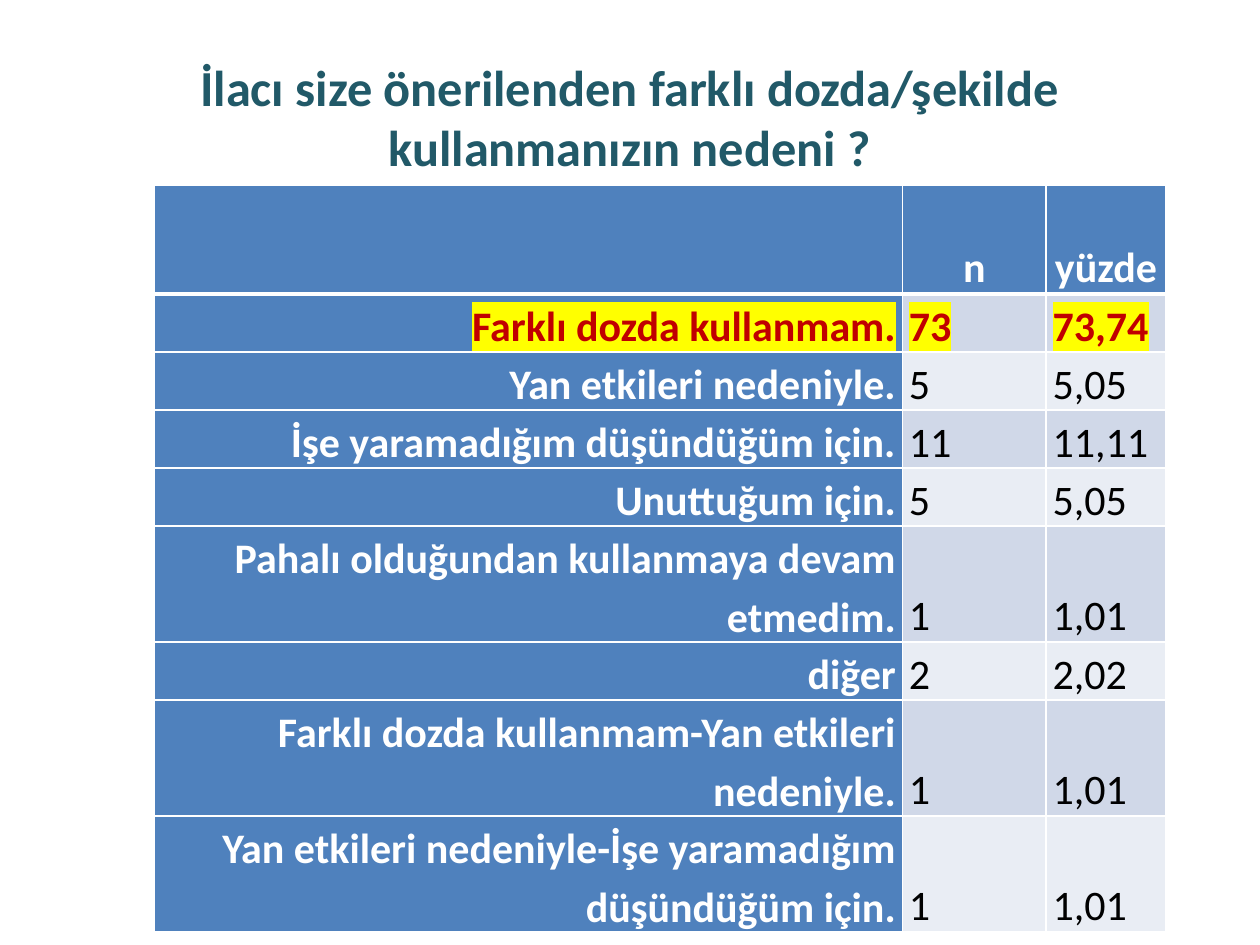
from lxml import etree
from pptx import Presentation
from pptx import util as u
from pptx.dml.color import RGBColor
from pptx.enum import text
from pptx.oxml import ns

TEAL = RGBColor(0x21, 0x59, 0x68)
BLUE = RGBColor(0x4F, 0x81, 0xBD)
BANDS = RGBColor(0xD0, 0xD8, 0xE8), RGBColor(0xE9, 0xED, 0xF4)
WHITE = RGBColor(0xFF, 0xFF, 0xFF)
BLACK = RGBColor(0, 0, 0)
RED = RGBColor(0xC0, 0, 0)
YELLOW = RGBColor(0xFF, 0xFF, 0)

TITLE = "İlacı size önerilenden farklı dozda/şekilde kullanmanızın nedeni ?"
ROWS = [
    ("", "n", "yüzde"),
    ("Farklı dozda kullanmam.", "73", "73,74"),
    ("Yan etkileri nedeniyle.", "5", "5,05"),
    ("İşe yaramadığım düşündüğüm için.", "11", "11,11"),
    ("Unuttuğum için.", "5", "5,05"),
    ("Pahalı olduğundan kullanmaya devam etmedim.", "1", "1,01"),
    ("diğer", "2", "2,02"),
    ("Farklı dozda kullanmam-Yan etkileri nedeniyle.", "1", "1,01"),
    ("Yan etkileri nedeniyle-İşe yaramadığım düşündüğüm için.", "1", "1,01"),
]
COLUMN_WIDTHS = 15.09, 2.9, 2.41
HEADER_HEIGHT, ROW_HEIGHT = 2.2, 1.09
HIGHLIGHTED_ROW = 1


class SurveySlide:
    """Draws a survey question and its answer table on one slide."""

    def __init__(self, presentation, font="Calibri"):
        self.font = font
        self.slide = presentation.slides.add_slide(presentation.slide_layouts[6])

    def format_text(self, paragraph, size, color, bold, align, highlight=None):
        paragraph.alignment = align
        for run in paragraph.runs:
            run.font.size = u.Pt(size)
            run.font.bold = bold
            run.font.color.rgb = color
            if highlight is not None:
                mark = etree.SubElement(run.font.fill._xPr, ns.qn("a:highlight"))
                etree.SubElement(mark, ns.qn("a:srgbClr"), val=str(highlight))
            run.font.name = self.font

    def title(self, left, top, width, height, words):
        shape = self.slide.shapes.add_textbox(u.Cm(left), u.Cm(top), u.Cm(width), u.Cm(height))
        frame = shape.text_frame
        frame.word_wrap = True
        frame.vertical_anchor = text.MSO_ANCHOR.MIDDLE
        frame.text = words
        self.format_text(frame.paragraphs[0], 28.8, TEAL, True, text.PP_ALIGN.CENTER)

    def borders(self, cell, top, bottom):
        properties = cell._tc.get_or_add_tcPr()
        for index, (side, width) in enumerate(zip("LRTB", (1, 1, top, bottom))):
            line = etree.Element(ns.qn(f"a:ln{side}"), w=str(u.Pt(width)))
            fill = etree.SubElement(line, ns.qn("a:solidFill"))
            etree.SubElement(fill, ns.qn("a:srgbClr"), val=str(WHITE))
            properties.insert(index, line)

    def cell(self, cell, words, row, column):
        header, label = row == 0, column == 0
        marked = row == HIGHLIGHTED_ROW
        cell.fill.solid()
        cell.fill.fore_color.rgb = BLUE if header or label else BANDS[(row - 1) % 2]
        cell.margin_left = cell.margin_right = u.Cm(0.13)
        cell.margin_top = cell.margin_bottom = 0
        cell.vertical_anchor = text.MSO_ANCHOR.BOTTOM
        cell.text_frame.text = words
        paragraph = cell.text_frame.paragraphs[0]
        paragraph.line_spacing = 1.15
        color = RED if marked else WHITE if header or label else BLACK
        align = (text.PP_ALIGN.CENTER if header else
                 text.PP_ALIGN.RIGHT if label else text.PP_ALIGN.LEFT)
        self.format_text(paragraph, 24, color, header or label or marked, align,
                         YELLOW if marked else None)
        self.borders(cell, 3 if row == 1 else 1, 3 if header else 1)

    def table(self, left, top, rows, widths):
        heights = [HEADER_HEIGHT] + [ROW_HEIGHT] * (len(rows) - 1)
        shape = self.slide.shapes.add_table(len(rows), len(widths), u.Cm(left), u.Cm(top),
                                            u.Cm(sum(widths)), u.Cm(sum(heights)))
        table = shape.table
        for column, width in zip(table.columns, widths):
            column.width = u.Cm(width)
        for row, (values, height) in enumerate(zip(rows, heights)):
            table.rows[row].height = u.Cm(height)
            for column, words in enumerate(values):
                self.cell(table.cell(row, column), words, row, column)


def main():
    presentation = Presentation()
    presentation.slide_width, presentation.slide_height = u.Cm(25.4), u.Cm(19.05)
    slide = SurveySlide(presentation)
    slide.title(1.27, 0.76, 22.86, 3.18, TITLE)
    slide.table(3.1, 3.73, ROWS, COLUMN_WIDTHS)
    presentation.save("out.pptx")


if __name__ == "__main__":
    main()
